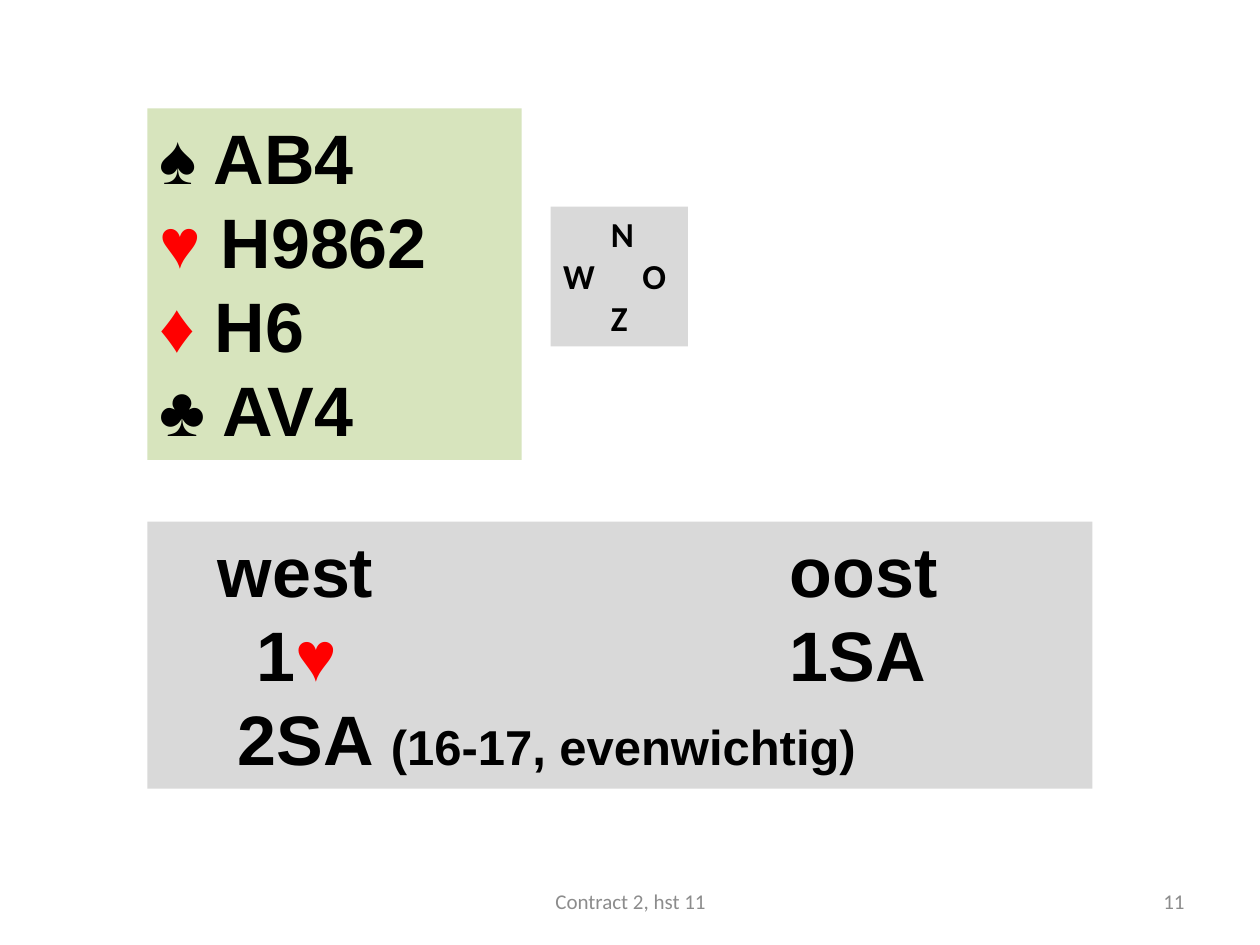
import itertools

import pptx
import pptx.dml.color
import pptx.enum.shapes
import pptx.enum.text
import pptx.oxml.ns
import pptx.util
from lxml import etree
from pptx.util import Inches

COLOURS = {"hand": "D7E4BD", "grey": "D9D9D9", "black": "000000",
           "red": "FF0000", "footer": "8C8C8C"}
RED_SUITS = "♥♦"
ALIGN = pptx.enum.text.PP_ALIGN

# Each line is a list of (text, size) parts, with its tab stops in inches
HAND = [([(line, 40)], []) for line in ("♠ AB4", "♥ H9862", "♦ H6", "♣ AV4")]
COMPASS = [([("\tN", 20)], [0.38]),
           ([("W\tO", 20)], [0.63]),
           ([("\tZ", 20)], [0.38])]
BIDDING = [([("\twest\toost", 40)], [0.46, 5]),
           ([("\t1♥\t1SA", 40)], [0.77, 5]),
           ([("\t2SA ", 40), ("(16-17, evenwichtig)", 28)], [0.62])]

# Left, top, width, height; fill; font; lines
PANELS = [((1.17, 0.86, 2.97, 2.79), "hand", "Arial", HAND),
          ((4.37, 1.64, 1.09, 1.11), "grey", "Calibri", COMPASS),
          ((1.17, 4.14, 7.5, 2.12), "grey", "Arial", BIDDING)]
FOOTERS = [((7.17, 6.95, 2.33, 0.4), "11", ALIGN.RIGHT),
           ((3.42, 6.95, 3.17, 0.4), "Contract 2, hst 11", ALIGN.CENTER)]


def rgb(name):
    return pptx.dml.color.RGBColor.from_string(COLOURS[name])


def add_span(para, text, font, size, colour, bold=False):
    span = para.add_run()
    span.text = text
    span.font.name = font
    span.font.size = pptx.util.Pt(size)
    span.font.bold = bold
    span.font.color.rgb = rgb(colour)


def set_tabs(para, stops):
    properties = para._p.get_or_add_pPr()
    tab_list = etree.SubElement(properties, pptx.oxml.ns.qn("a:tabLst"))
    for stop in stops:
        etree.SubElement(tab_list, pptx.oxml.ns.qn("a:tab"),
                         pos=str(Inches(stop)), algn="l")


def add_panel(slide, place, fill, font, lines):
    box = slide.shapes.add_shape(pptx.enum.shapes.MSO_SHAPE.RECTANGLE,
                                 *map(Inches, place))
    box.shadow.inherit = False
    box.fill.solid()
    box.fill.fore_color.rgb = rgb(fill)
    box.line.fill.background()
    frame = box.text_frame
    frame.word_wrap = True
    frame.vertical_anchor = pptx.enum.text.MSO_ANCHOR.TOP
    for index, (parts, stops) in enumerate(lines):
        para = frame.add_paragraph() if index else frame.paragraphs[0]
        para.alignment = ALIGN.LEFT
        if stops:
            set_tabs(para, stops)
        for text, size in parts:
            # Hearts and diamonds become red spans of their own
            for is_red, letters in itertools.groupby(text, lambda c: c in RED_SUITS):
                add_span(para, "".join(letters), font, size,
                         "red" if is_red else "black", bold=True)


def add_footer(slide, place, text, alignment):
    box = slide.shapes.add_textbox(*map(Inches, place))
    frame = box.text_frame
    frame.word_wrap = True
    frame.vertical_anchor = pptx.enum.text.MSO_ANCHOR.MIDDLE
    para = frame.paragraphs[0]
    para.alignment = alignment
    add_span(para, text, "Calibri", 12, "footer")


def main():
    deck = pptx.Presentation()
    deck.slide_width, deck.slide_height = Inches(10), Inches(7.5)
    page = deck.slides.add_slide(deck.slide_layouts.get_by_name("Blank"))
    # Hand, compass and bidding
    for panel in PANELS:
        add_panel(page, *panel)
    # Page number and footer
    for footer in FOOTERS:
        add_footer(page, *footer)
    deck.save("out.pptx")


if __name__ == "__main__":
    main()
